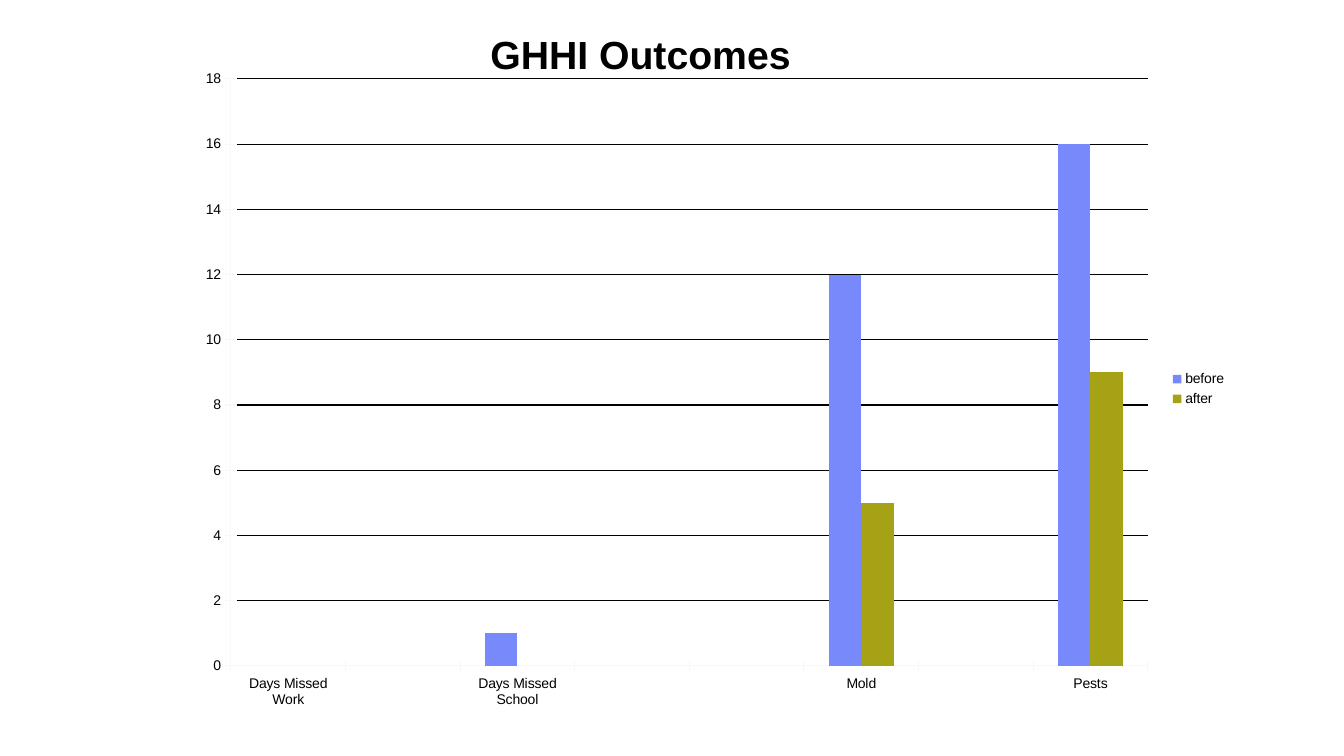
from lxml import etree
from pptx import Presentation
from pptx.chart.data import CategoryChartData as Data
from pptx.dml.color import RGBColor
from pptx.enum.chart import XL_CHART_TYPE as Kind, XL_LEGEND_POSITION as Side
from pptx.enum.chart import XL_TICK_MARK as Tick
from pptx.enum.text import MSO_ANCHOR as Anchor, PP_ALIGN as Align
from pptx.oxml import parse_xml
from pptx.oxml.ns import nsdecls, qn
from pptx.util import Pt

TITLE = "GHHI Outcomes"
CATS = ["Days Missed Work", "", "Days Missed School", "", "", "Mold", "", "Pests"]
SERIES = [
    ("before", "7889FB", [None, None, 1, None, None, 12, None, 16]),
    ("after", "A5A216", [None, None, None, None, None, 5, None, 9]),
]
FONT, BLACK, FAINT = "Arial", "000000", "F8F8F8"

# left, top, width, height in px
SLIDE = (0, 0, 1344, 756)
HEAD = (187, 25, 907, 57)
CHART = (184, 58, 1053, 662)
PLOT = (231, 79, 917, 587)
SCALE = 12192000 / 1344


def emu(box):
    return [round(n * SCALE) for n in box]


def color(code):
    return RGBColor.from_string(code)


def style(font, size, bold=False):
    font.name, font.size, font.bold = FONT, Pt(size), bold
    font.color.rgb = color(BLACK)


def rule(line, code):
    line.color.rgb = color(code)
    line.width = Pt(0.75)


def place_plot(chart):
    """Fix the inner plot area as fractions of the chart frame."""
    left, top, wide, high = CHART
    parts = {
        "x": (PLOT[0] - left) / wide, "y": (PLOT[1] - top) / high,
        "w": PLOT[2] / wide, "h": PLOT[3] / high,
    }
    area = chart.element.find(".//" + qn("c:plotArea"))
    for old in area.findall(qn("c:layout")):
        area.remove(old)
    layout = parse_xml(f"<c:layout {nsdecls('c')}/>")
    manual = etree.SubElement(layout, qn("c:manualLayout"))
    tags = [("layoutTarget", "inner"), ("xMode", "edge"), ("yMode", "edge")]
    tags += [(key, f"{val:.4f}") for key, val in parts.items()]
    for tag, val in tags:
        etree.SubElement(manual, qn("c:" + tag)).set("val", val)
    area.insert(0, layout)


def add_bars(slide):
    data = Data()
    data.categories = CATS
    for name, _, vals in SERIES:
        data.add_series(name, vals)
    chart = slide.shapes.add_chart(Kind.COLUMN_CLUSTERED, *emu(CHART), data).chart
    style(chart.font, 10)
    chart.has_title = False
    chart.has_legend = True
    chart.legend.position = Side.RIGHT
    chart.legend.include_in_layout = False

    plot = chart.plots[0]
    plot.gap_width, plot.overlap = 150, 0
    plot.vary_by_categories = False
    for bars, (_, code, _) in zip(plot.series, SERIES):
        bars.format.fill.solid()
        bars.format.fill.fore_color.rgb = color(code)
        bars.format.line.fill.background()

    for axis in (chart.category_axis, chart.value_axis):
        axis.major_tick_mark = Tick.CROSS
        axis.minor_tick_mark = Tick.NONE
        rule(axis.format.line, FAINT)
    axis = chart.value_axis
    axis.minimum_scale, axis.maximum_scale, axis.major_unit = 0, 18, 2
    axis.has_major_gridlines = True
    rule(axis.major_gridlines.format.line, BLACK)
    place_plot(chart)


def add_title(slide):
    head = slide.shapes.title
    head.left, head.top, head.width, head.height = emu(HEAD)
    frame = head.text_frame
    frame.word_wrap = True
    frame.vertical_anchor = Anchor.MIDDLE
    para = frame.paragraphs[0]
    para.alignment = Align.CENTER
    run = para.add_run()
    run.text = TITLE
    style(run.font, 28, True)


def main():
    deck = Presentation()
    deck.slide_width, deck.slide_height = emu(SLIDE)[2:]
    slide = deck.slides.add_slide(deck.slide_layouts[5])
    add_bars(slide)
    add_title(slide)
    deck.save("out.pptx")


if __name__ == "__main__":
    main()
